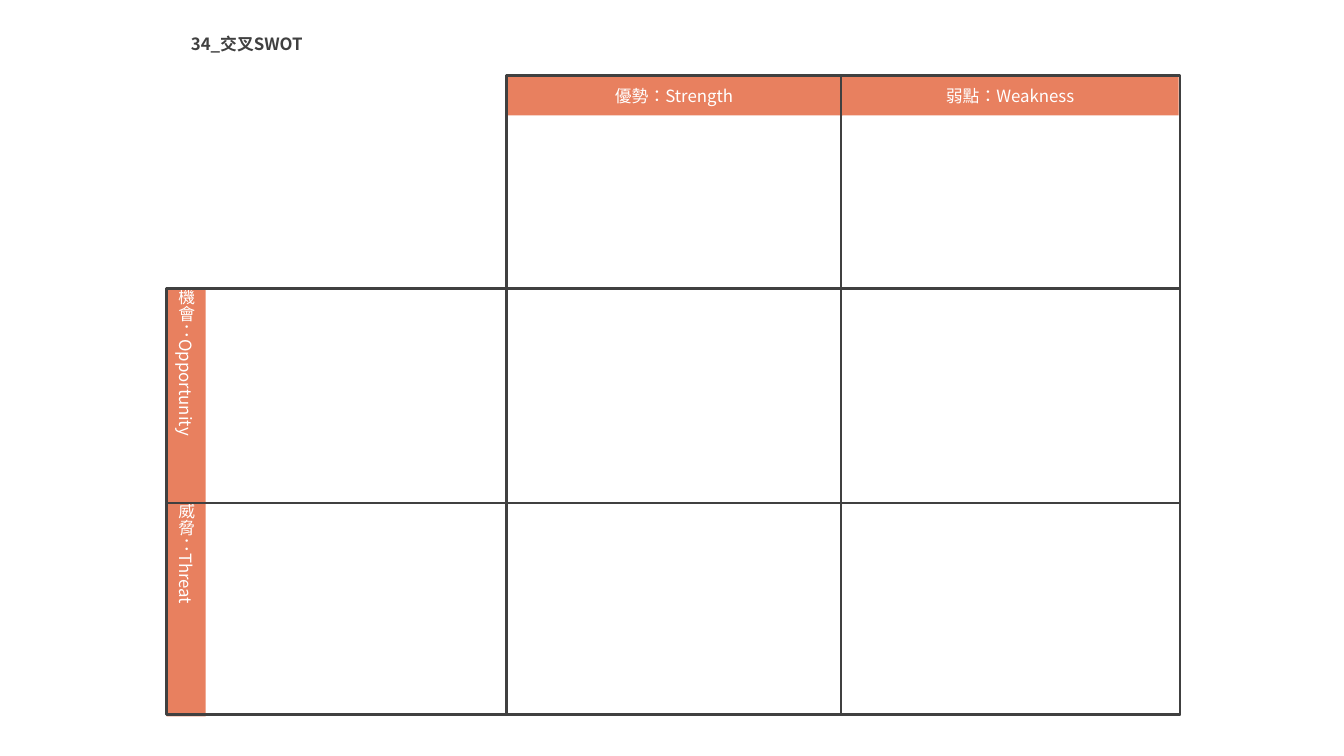
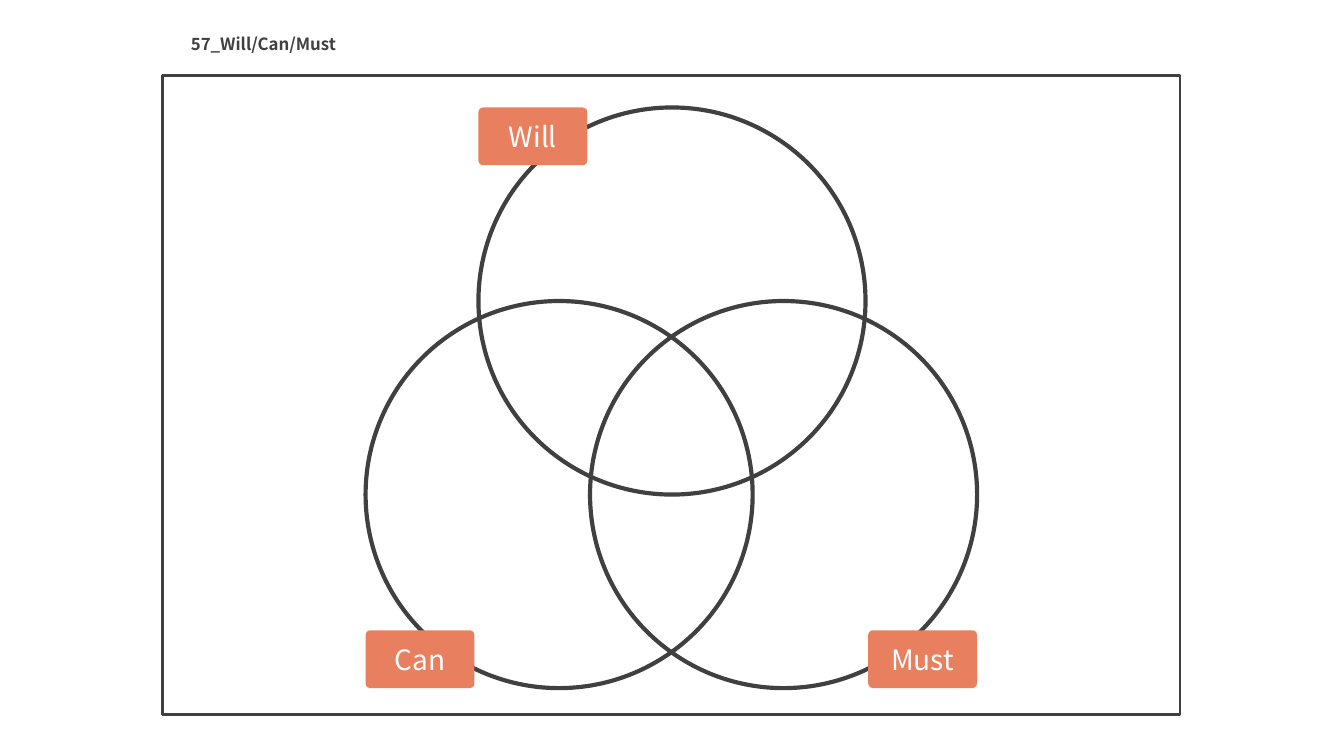
from pptx import Presentation
from pptx.dml.color import RGBColor
from pptx.enum.shapes import MSO_CONNECTOR, MSO_SHAPE as SHAPE
from pptx.enum.text import MSO_ANCHOR as ANCHOR, MSO_AUTO_SIZE as AUTO, PP_ALIGN as ALIGN
from pptx.oxml.ns import qn
from pptx.util import Inches, Pt
from lxml import etree

FONT = "Noto Sans CJK JP"
COLORS = {name: RGBColor.from_string(value) for name, value in {
    "ink": "404040", "accent": "E8805F", "paper": "FFFFFF"}.items()}
FRAME_TOP, FRAME_BOTTOM = 0.56, 5.32


def write(shape, text, size, color, align=ALIGN.CENTER, bold=False):
    frame = shape.text_frame
    frame.text = text
    frame.word_wrap = False
    para = frame.paragraphs[0]
    para.alignment = align
    for span in para.runs:
        span.font.name = FONT
        span.font.size = Pt(size)
        span.font.bold = bold
        span.font.color.rgb = COLORS[color]
        properties = span.font._element
        properties.set("lang", "zh-TW")
        etree.SubElement(properties, qn("a:ea")).set("typeface", FONT)


def add_box(page, kind, left, top, width, height, line=None, label="", size=9):
    """Add an outlined shape when line is given, otherwise a filled label."""
    box = page.shapes.add_shape(
        kind, Inches(left), Inches(top), Inches(width), Inches(height))
    box.shadow.inherit = False
    if line:
        box.fill.background()
        box.line.color.rgb = COLORS["ink"]
        box.line.width = Pt(line)
        return box
    box.fill.solid()
    box.fill.fore_color.rgb = COLORS["accent"]
    box.line.fill.background()
    write(box, label, size, "paper")
    frame = box.text_frame
    frame.vertical_anchor = ANCHOR.MIDDLE
    frame.margin_left = frame.margin_right = 0
    frame.margin_top = frame.margin_bottom = 0
    return box


deck = Presentation()
deck.slide_width = Inches(10)
deck.slide_height = deck.slide_width * 9 // 16

# Pages and titles
pages = []
for heading, width in [("34_交叉SWOT", 1.12), ("57_Will/Can/Must", 1.44)]:
    page = deck.slides.add_slide(deck.slide_layouts[5])
    title = page.shapes.title
    title.left, title.top = Inches(1.32), Inches(0.2)
    title.width, title.height = Inches(width), Inches(0.25)
    write(title, heading, 9, "ink", ALIGN.LEFT, bold=True)
    title.text_frame.vertical_anchor = ANCHOR.TOP
    title.text_frame.auto_size = AUTO.SHAPE_TO_FIT_TEXT
    pages.append(page)
swot_page, venn_page = pages

# Cross SWOT grid
grid_left, strength_left, weakness_left, grid_right = 1.24, 3.77, 6.26, 8.78
opportunity_top, row_height = 2.15, 1.59
threat_top = opportunity_top + row_height

for top, label in [(threat_top, "威脅：Threat"), (opportunity_top, "機會：Opportunity")]:
    strip = add_box(swot_page, SHAPE.RECTANGLE, grid_left, top, 0.29, row_height, label=label)
    strip.text_frame.word_wrap = True
    strip.text_frame._txBody.bodyPr.set("vert", "eaVert")
for left, label in [(3.76, "優勢：Strength"), (weakness_left, "弱點：Weakness")]:
    add_box(swot_page, SHAPE.RECTANGLE, left, FRAME_TOP, 2.51, 0.3, label=label)

for ends in [(grid_left, threat_top, grid_right, threat_top),
             (weakness_left, FRAME_TOP, weakness_left, FRAME_BOTTOM)]:
    divider = swot_page.shapes.add_connector(
        MSO_CONNECTOR.STRAIGHT, *[Inches(value) for value in ends])
    divider.line.color.rgb = COLORS["ink"]
    divider.line.width = Pt(1)
    etree.SubElement(divider._element.spPr, qn("a:effectLst"))

for left, top in [(strength_left, FRAME_TOP), (grid_left, opportunity_top)]:
    add_box(swot_page, SHAPE.RECTANGLE, left, top,
            grid_right - left, FRAME_BOTTOM - top, line=1.5)

# Will / Can / Must circles
diameter, tag_width, tag_height = 2.88, 0.81, 0.43
upper, lower = 0.8, 2.24
right_offset, bottom_offset = diameter - tag_width, diameter - tag_height
circles = [
    ("Will", 3.56, upper, 0, 0),
    ("Must", 4.39, lower, right_offset, bottom_offset),
    ("Can", 2.72, lower, 0, bottom_offset),
]
add_box(venn_page, SHAPE.RECTANGLE, 1.21, FRAME_TOP, 7.57, FRAME_BOTTOM - FRAME_TOP, line=1.5)
for label, left, top, shift_x, shift_y in circles:
    add_box(venn_page, SHAPE.OVAL, left, top, diameter, diameter, line=2.25)
for label, left, top, shift_x, shift_y in reversed(circles):
    tag = add_box(venn_page, SHAPE.ROUNDED_RECTANGLE, left + shift_x, top + shift_y,
                  tag_width, tag_height, label=label, size=15)
    tag.adjustments[0] = 0.08

deck.save("out.pptx")
